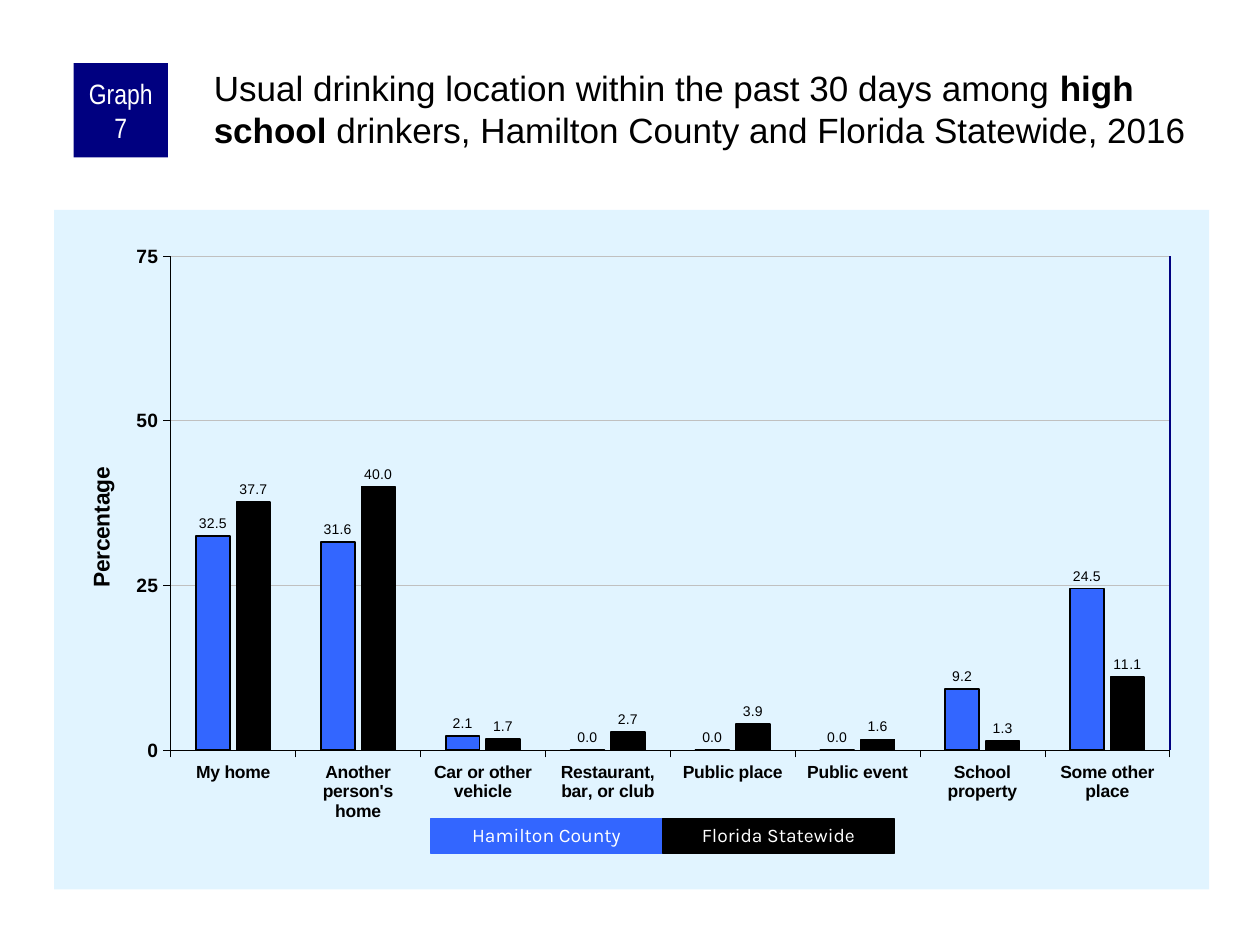
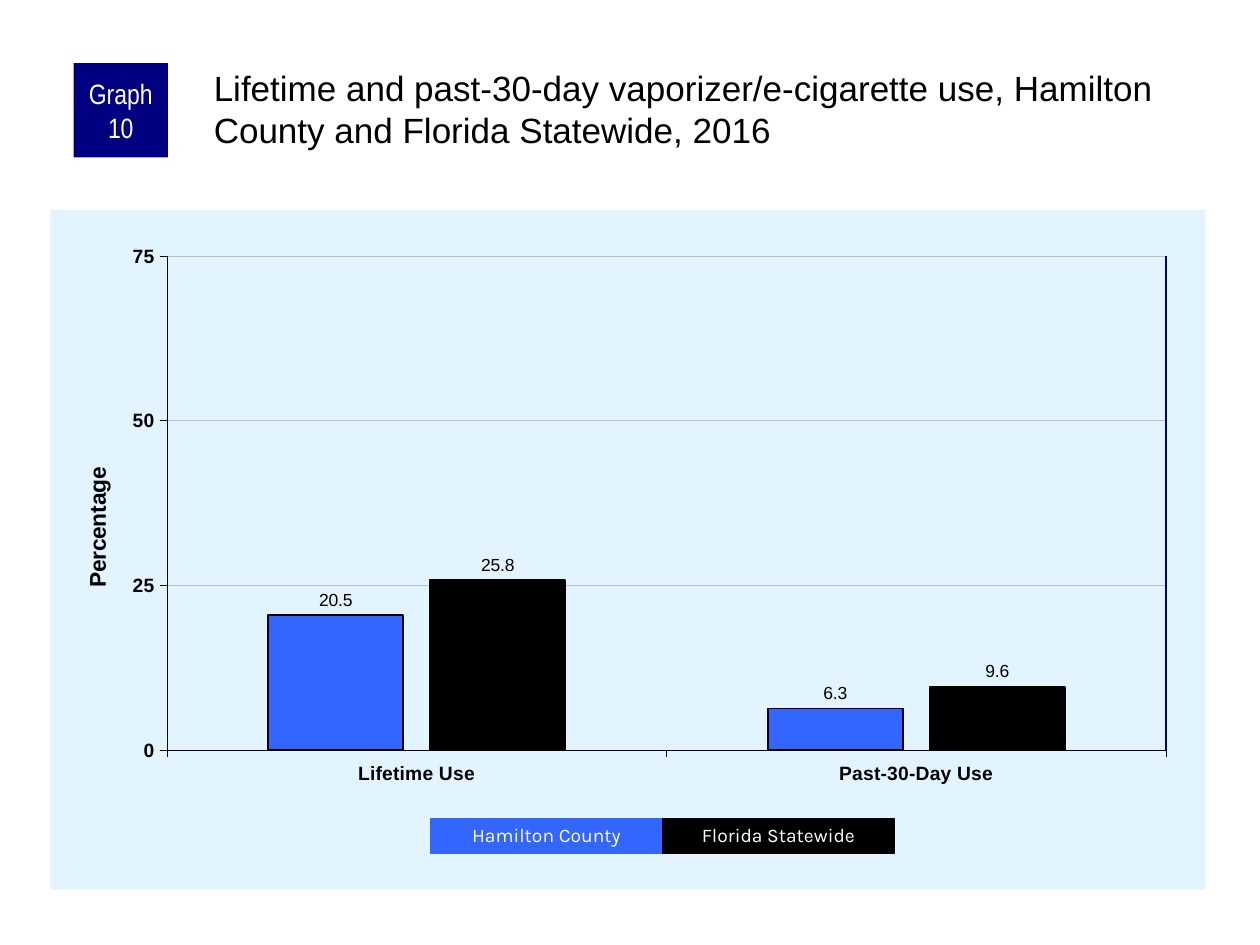
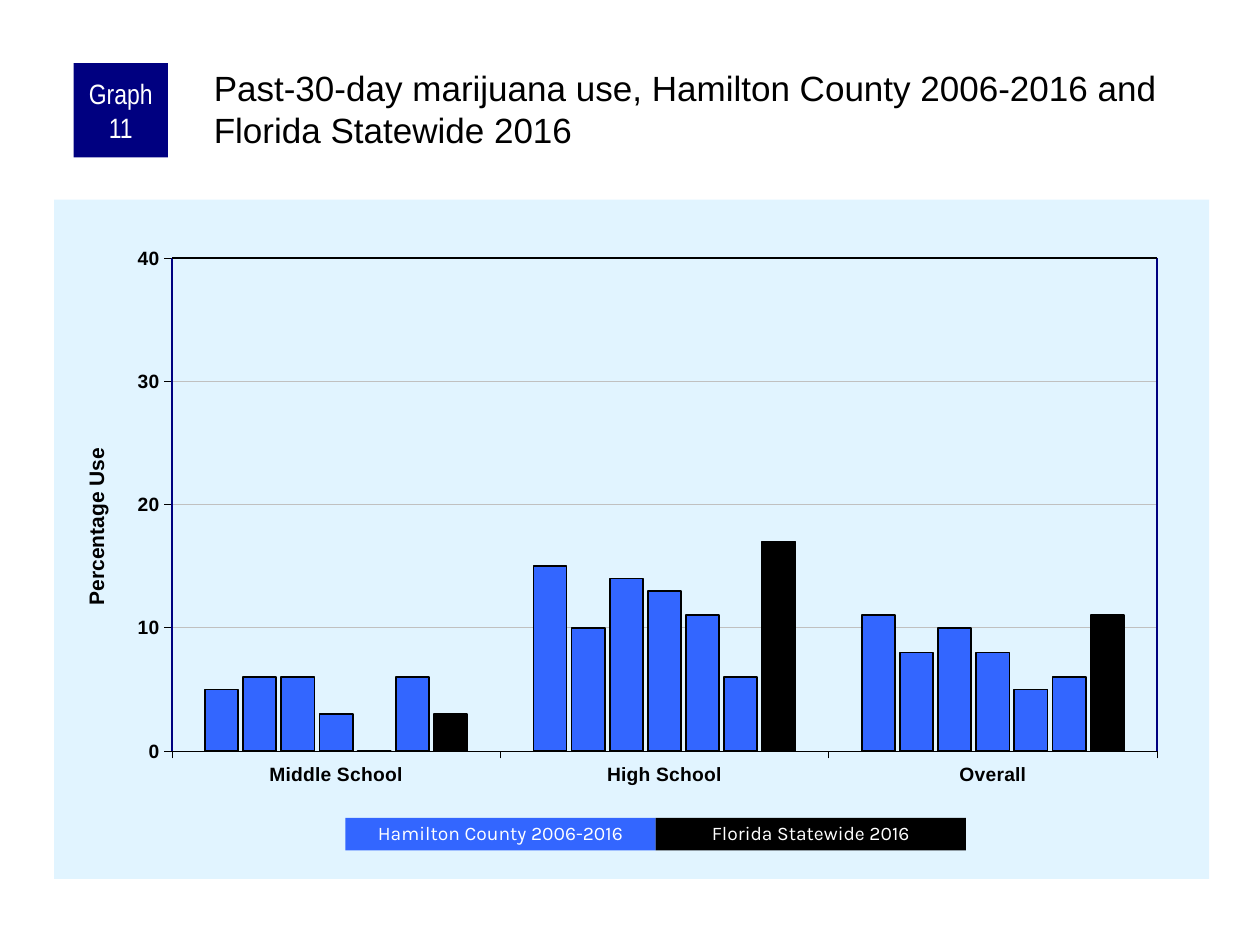
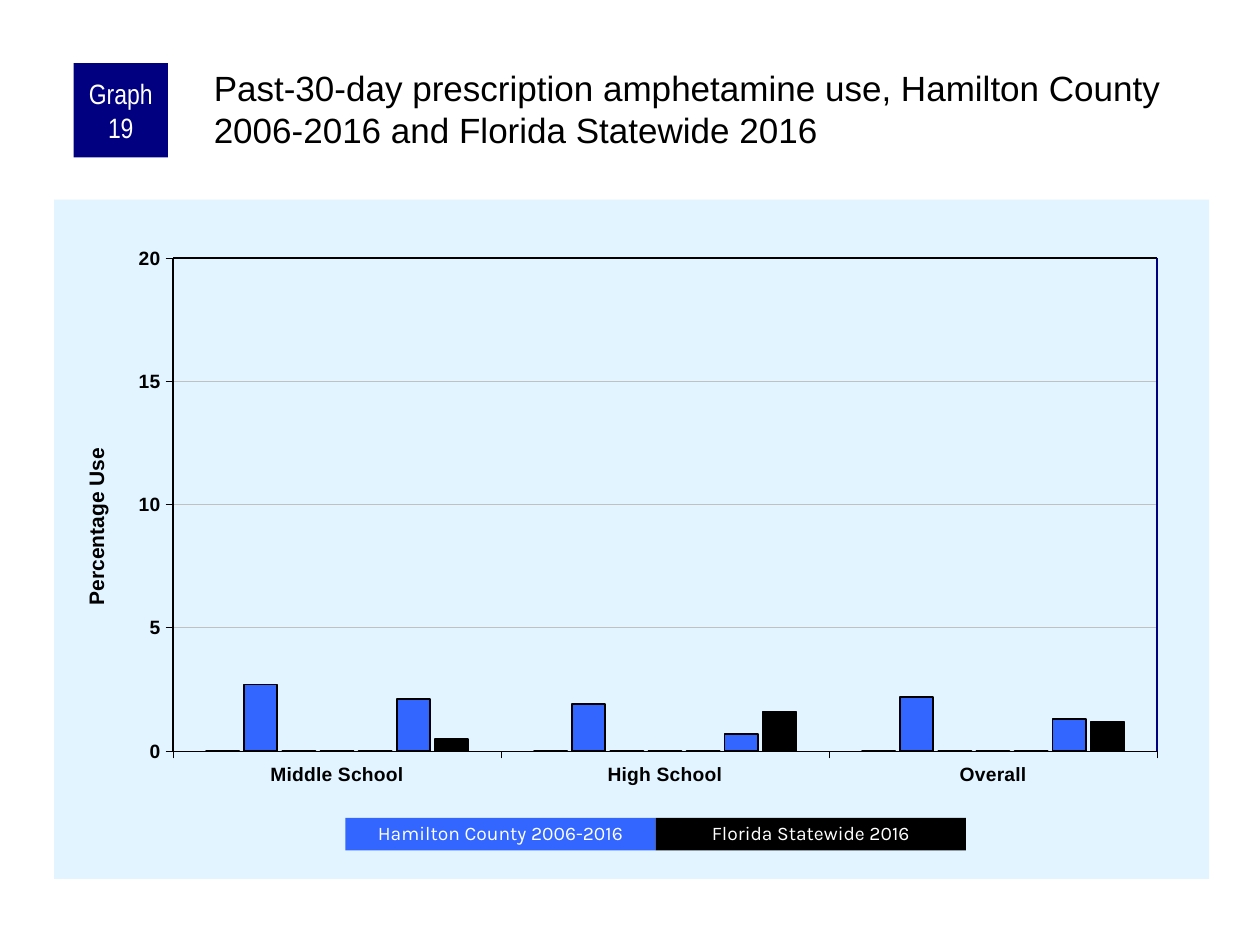
from lxml import etree
from pptx import Presentation
from pptx import util as u
from pptx.chart import data as cd
from pptx.dml import color as dml
from pptx.enum import chart as ec, shapes, text
from pptx.oxml import ns

COLS, ROWS = 120, 90
BLUE, BLACK, NAVY, WHITE = "3366FF", "000000", "000080", "FFFFFF"
PANEL, GRID = "E1F4FF", "C0C0C0"
SCHOOLS = ["Middle School", "High School", "Overall"]

prs = Presentation()
prs.slide_width, prs.slide_height = u.Inches(10), u.Inches(7.5)


def rgb(value):
    return dml.RGBColor.from_string(value)


def cells(col, row, cols, rows):
    w, h = prs.slide_width / COLS, prs.slide_height / ROWS
    return [round(v) for v in (col * w, row * h, cols * w, rows * h)]


def line(fmt, color, width):
    fmt.color.rgb = rgb(color)
    fmt.width = u.Pt(width)


def style(font, size, color=BLACK, bold=None, name="Arial"):
    font.size, font.bold, font.name = u.Pt(size), bold, name
    font.color.rgb = rgb(color)


def write(tf, words, size, color=BLACK, name="Arial", align=text.PP_ALIGN.CENTER,
          anchor=text.MSO_ANCHOR.MIDDLE, insets=(0, 0, 0, 0), spacing=None):
    tf.word_wrap, tf.auto_size = True, text.MSO_AUTO_SIZE.NONE
    tf.vertical_anchor = anchor
    tf.margin_left, tf.margin_top, tf.margin_right, tf.margin_bottom = map(u.Inches, insets)
    p = tf.paragraphs[0]
    p.alignment, p.line_spacing = align, spacing
    for i, part in enumerate(words.split("**")):
        r = p.add_run()
        r.text = part
        style(r.font, size, color, i % 2 == 1, name)


def block(s, box, fill, words, **fmt):
    sp = s.shapes.add_shape(shapes.MSO_SHAPE.RECTANGLE, *box)
    sp.shadow.inherit = False
    sp.fill.solid()
    sp.fill.fore_color.rgb = rgb(fill)
    sp.line.fill.background()
    write(sp.text_frame, words, color=WHITE, **fmt)
    return sp


def header(s, number, title):
    sp = s.shapes.title
    sp.left, sp.top, sp.width, sp.height = cells(20, 6, 95, 10)
    write(sp.text_frame, title, 20, align=text.PP_ALIGN.LEFT,
          anchor=text.MSO_ANCHOR.TOP, insets=(0.03, 0.03, 0, 0))
    block(s, cells(7, 6, 9, 9), NAVY, f"Graph {number}", size=16,
          name="Arial Narrow", insets=(0.05, 0, 0.05, 0))


def key(s, box, names, outlined):
    left, top, width, height = box
    w = width // 2
    for i, (name, color) in enumerate(zip(names, (BLUE, BLACK))):
        sp = block(s, (left + i * w, top, w, height), color, name,
                   size=11, name="Karla", spacing=0.9)
        if outlined:
            line(sp.line, color, 0.75)


def layout(**shares):
    el = etree.Element(ns.qn("c:layout"))
    manual = etree.SubElement(el, ns.qn("c:manualLayout"))
    if "w" in shares:
        etree.SubElement(manual, ns.qn("c:layoutTarget")).set("val", "inner")
    for axis in "xy":
        etree.SubElement(manual, ns.qn(f"c:{axis}Mode")).set("val", "edge")
    for side, share in shares.items():
        etree.SubElement(manual, ns.qn(f"c:{side}")).set("val", str(share))
    return el


def place(parent, index, el):
    for old in parent.findall(ns.qn("c:layout")):
        parent.remove(old)
    parent.insert(index, el)


def paint_panel(chart):
    sp_pr = etree.Element(ns.qn("c:spPr"))
    fill = etree.SubElement(sp_pr, ns.qn("a:solidFill"))
    etree.SubElement(fill, ns.qn("a:srgbClr")).set("val", PANEL)
    etree.SubElement(etree.SubElement(sp_pr, ns.qn("a:ln")), ns.qn("a:noFill"))
    chart._chartSpace.find(ns.qn("c:chart")).addnext(sp_pr)


def format_axes(chart, top, step, cat_size, title, title_size, title_at):
    cat, val = chart.category_axis, chart.value_axis
    for axis, size in ((cat, cat_size), (val, 11)):
        axis.major_tick_mark = ec.XL_TICK_MARK.OUTSIDE
        axis.minor_tick_mark = ec.XL_TICK_MARK.NONE
        style(axis.tick_labels.font, size, bold=True)
        line(axis.format.line, BLACK, 0.25)
    cat.has_major_gridlines = False
    val.minimum_scale, val.maximum_scale, val.major_unit = 0, top, step
    val.tick_labels.number_format = "0"
    val.tick_labels.number_format_is_linked = False
    line(val.major_gridlines.format.line, GRID, 0.25)
    tf = val.axis_title.text_frame
    tf.text = title
    style(tf.paragraphs[0].runs[0].font, title_size, bold=True)
    place(val.axis_title._element, 1, layout(x=title_at[0], y=title_at[1]))


def format_series(plot, label_size):
    last = len(plot.series) - 1
    for i, ser in enumerate(plot.series):
        ser.invert_if_negative = False
        ser.format.fill.solid()
        ser.format.fill.fore_color.rgb = rgb(BLACK if i == last else BLUE)
        line(ser.format.line, BLACK, 1)
        if label_size:
            labels = ser.data_labels
            labels.show_value = True
            labels.number_format, labels.number_format_is_linked = "0.0", False
            labels.position = ec.XL_LABEL_POSITION.OUTSIDE_END
            style(labels.font, label_size)


def frame(s, box, plot_box, edges):
    left, top, width, height = box
    x, y, w, h = plot_box
    x1, x2 = round(left + x * width), round(left + (x + w) * width)
    y1, y2 = round(top + y * height), round(top + (y + h) * height)
    ends = {"left": (x1, y1, x1, y2), "right": (x2, y1, x2, y2), "top": (x1, y1, x2, y1)}
    for edge, color in edges.items():
        cx = s.shapes.add_connector(shapes.MSO_CONNECTOR.STRAIGHT, *ends[edge])
        line(cx.line, color, 1)
        etree.SubElement(cx._element.spPr, ns.qn("a:effectLst"))


def column_chart(s, box, cats, rows, plot_box, gap, overlap, edges, axes,
                 size, label_size=None):
    data = cd.CategoryChartData()
    data.categories = cats
    for i, values in enumerate(rows, 1):
        data.add_series(f"Series {i}", values)
    chart = s.shapes.add_chart(ec.XL_CHART_TYPE.COLUMN_CLUSTERED, *box, data).chart
    chart.has_legend = chart.has_title = False
    style(chart.font, size)
    paint_panel(chart)
    plot = chart.plots[0]
    plot.gap_width, plot.overlap, plot.vary_by_categories = gap, overlap, False
    place(chart._chartSpace.chart.plotArea, 0, layout(**dict(zip("xywh", plot_box))))
    format_axes(chart, **axes)
    format_series(plot, label_size)
    frame(s, box, plot_box, edges)


def new_slide(number, title):
    s = prs.slides.add_slide(prs.slide_layouts[5])
    header(s, number, title)
    return s


def comparison_slide(number, title, cats, rows, col, cat_size, label_size):
    s = new_slide(number, title)
    column_chart(s, cells(col, 20, 110, 64.7), cats, rows, (0.101, 0.068, 0.865, 0.727),
                 150, -20, {"right": NAVY},
                 dict(top=75, step=25, cat_size=cat_size, title="Percentage",
                      title_size=13, title_at=(0.025, 0.373)), 11.5, label_size)
    key(s, cells(41, 78, 44.2, 3.25), ("Hamilton County", "Florida Statewide"), True)


def trend_slide(number, title, rows, top, step, left_color, plot_x):
    s = new_slide(number, title)
    column_chart(s, cells(5.15, 19, 110, 64.7), SCHOOLS, rows,
                 (plot_x, 0.086, round(0.955 - plot_x, 3), 0.726), 200, -15,
                 {"left": left_color, "right": NAVY, "top": BLACK},
                 dict(top=top, step=step, cat_size=11, title="Percentage Use",
                      title_size=12, title_at=(0.022, 0.36)), 8)
    key(s, cells(32.9, 77.9, 59.1, 3.1),
        ("Hamilton County 2006-2016", "Florida Statewide 2016"), False)


def main():
    comparison_slide(
        7, "Usual drinking location within the past 30 days among **high school** "
        "drinkers, Hamilton County and Florida Statewide, 2016",
        ["My home", "Another person's home", "Car or other vehicle",
         "Restaurant, bar, or club", "Public place", "Public event",
         "School property", "Some other place"],
        [[32.5, 31.6, 2.1, 0, 0, 0, 9.2, 24.5],
         [37.7, 40, 1.7, 2.7, 3.9, 1.6, 1.3, 11.1]], 5.15, 10, 8)
    comparison_slide(
        10, "Lifetime and past-30-day vaporizer/e-cigarette use, Hamilton County "
        "and Florida Statewide, 2016",
        ["Lifetime Use", "Past-30-Day Use"], [[20.5, 6.3], [25.8, 9.6]], 4.8, 11, 10)
    trend_slide(
        11, "Past-30-day marijuana use, Hamilton County 2006-2016 and "
        "Florida Statewide 2016",
        [[5, 15, 11], [6, 10, 8], [6, 14, 10], [3, 13, 8], [0, 11, 5],
         [6, 6, 6], [3, 17, 11]], 40, 10, NAVY, 0.102)
    none = [0, 0, 0]
    trend_slide(
        19, "Past-30-day prescription amphetamine use, Hamilton County 2006-2016 "
        "and Florida Statewide 2016",
        [none, [2.7, 1.9, 2.2], none, none, none, [2.1, 0.7, 1.3],
         [0.5, 1.6, 1.2]], 20, 5, BLACK, 0.103)
    prs.save("out.pptx")


if __name__ == "__main__":
    main()
